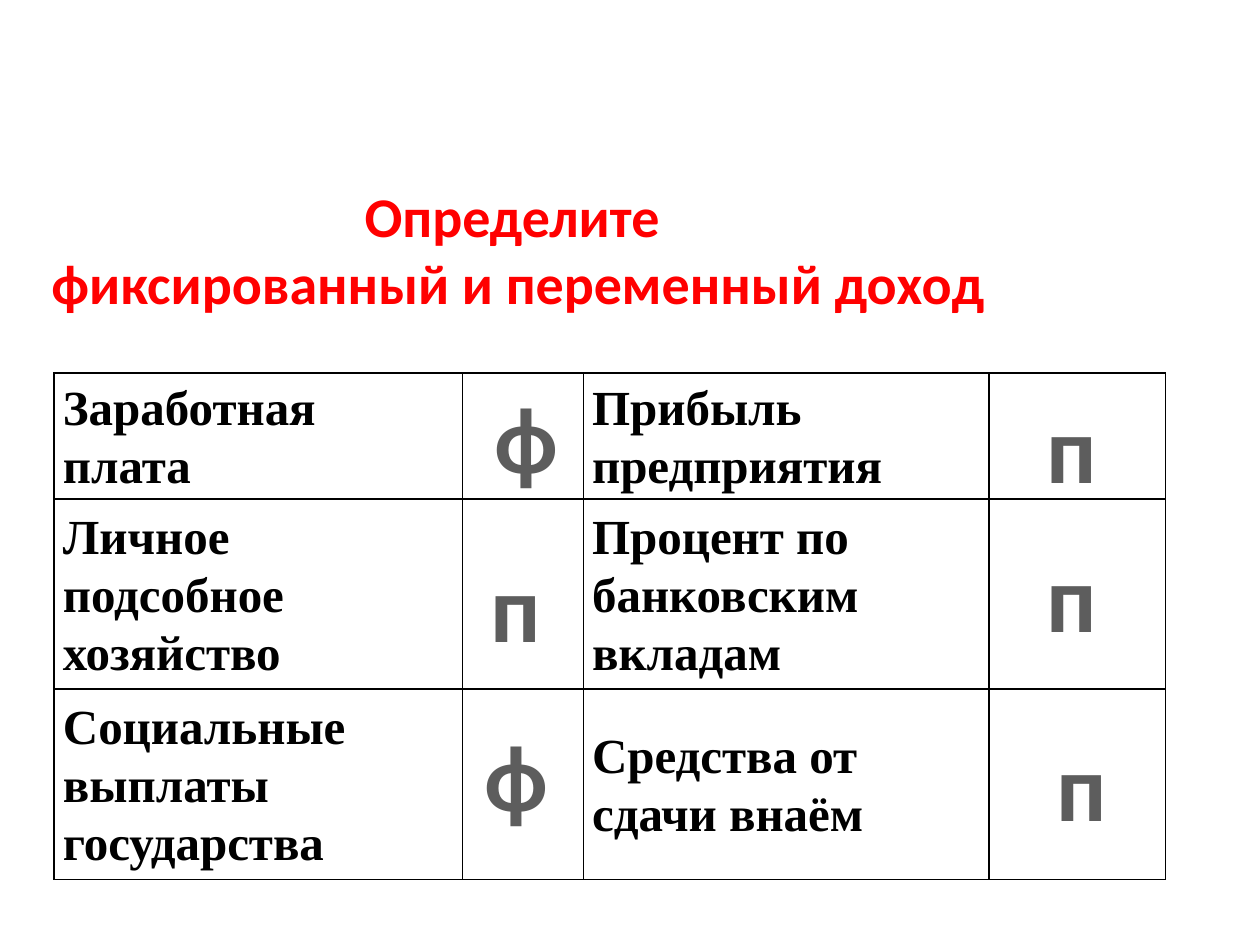
from lxml import etree
from pptx import Presentation
from pptx.dml.color import RGBColor
from pptx.enum.text import MSO_ANCHOR, MSO_AUTO_SIZE, PP_ALIGN
from pptx.oxml.ns import qn
from pptx.util import Inches, Pt

CENTER = PP_ALIGN.CENTER
TOP, MIDDLE = MSO_ANCHOR.TOP, MSO_ANCHOR.MIDDLE
NO_AUTOFIT = MSO_AUTO_SIZE.NONE
TITLE_ONLY = 5

COLORS = {"title": "FF0000", "text": "000000", "border": "000000", "answer": "5D5D5D"}
HEAD_FONT, TABLE_FONT = "Calibri", "Times New Roman"

COL_WIDTHS = [3.24, 0.96, 3.22, 1.4]
ROW_HEIGHTS = [1, 1.51, 1.51]
INCOMES = [
    ["Заработная плата", "", "Прибыль предприятия", ""],
    ["Личное подсобное хозяйство", "", "Процент по банковским вкладам", ""],
    ["Социальные выплаты государства", "", "Средства от сдачи внаём", ""],
]
# letter, left, top, width
ANSWERS = [
    ("ф", 3.82, 2.96, 0.71),
    ("ф", 3.74, 5.64, 0.71),
    ("п", 3.79, 4.3, 0.61),
    ("п", 8.28, 5.72, 0.61),
    ("п", 8.2, 4.22, 0.61),
    ("п", 8.2, 3.04, 0.61),
]


class SlideBuilder:
    """Holds the current slide and the style of its elements."""

    def __init__(self, slide):
        self.slide = slide

    def style(self, p, font, size, color):
        p.font.name = font
        p.font.size = Pt(size)
        p.font.bold = True
        p.font.color.rgb = RGBColor.from_string(COLORS[color])

    def fill_frame(self, tf, lines, size, color):
        """Write centred lines that start at the top and do not wrap."""
        tf.word_wrap = False
        tf.auto_size = NO_AUTOFIT
        tf.vertical_anchor = TOP
        tf.text = "\n".join(lines)
        for p in tf.paragraphs:
            p.alignment = CENTER
            self.style(p, HEAD_FONT, size, color)

    def title(self, lines, left, top, width, height):
        sp = self.slide.shapes.title
        sp.left, sp.top = Inches(left), Inches(top)
        sp.width, sp.height = Inches(width), Inches(height)
        self.fill_frame(sp.text_frame, lines, 32, "title")

    def answer(self, letter, left, top, width):
        sp = self.slide.shapes.add_textbox(
            Inches(left), Inches(top), Inches(width), Inches(1.01))
        self.fill_frame(sp.text_frame, [letter], 54, "answer")

    def borders(self, cell):
        tc_pr = cell._tc.get_or_add_tcPr()
        for side in ("a:lnL", "a:lnR", "a:lnT", "a:lnB"):
            ln = etree.SubElement(tc_pr, qn(side), w=str(Pt(1)))
            fill = etree.SubElement(ln, qn("a:solidFill"))
            etree.SubElement(fill, qn("a:srgbClr"), val=COLORS["border"])

    def table(self, rows, left, top):
        table = self.slide.shapes.add_table(
            len(rows), len(COL_WIDTHS), Inches(left), Inches(top),
            Inches(sum(COL_WIDTHS)), Inches(sum(ROW_HEIGHTS))).table
        table.first_row = table.horz_banding = False
        for col, width in zip(table.columns, COL_WIDTHS):
            col.width = Inches(width)
        for row, height, texts in zip(table.rows, ROW_HEIGHTS, rows):
            row.height = Inches(height)
            for cell, text in zip(row.cells, texts):
                self.cell(cell, text)

    def cell(self, cell, text):
        self.borders(cell)
        cell.fill.background()
        cell.vertical_anchor = MIDDLE
        cell.margin_left = cell.margin_right = Inches(0.07)
        cell.margin_top = cell.margin_bottom = 0
        cell.text = text
        p = cell.text_frame.paragraphs[0]
        p.line_spacing = 1.07
        self.style(p, TABLE_FONT, 28, "text")


def main():
    prs = Presentation()
    prs.slide_width, prs.slide_height = Inches(10), Inches(7.5)
    builder = SlideBuilder(prs.slides.add_slide(prs.slide_layouts[TITLE_ONLY]))
    builder.table(INCOMES, 0.43, 2.96)
    builder.title(["Определите ", "фиксированный и переменный доход"],
                  0.28, 1.39, 7.67, 1.18)
    for answer in ANSWERS:
        builder.answer(*answer)
    prs.save("out.pptx")


if __name__ == "__main__":
    main()
